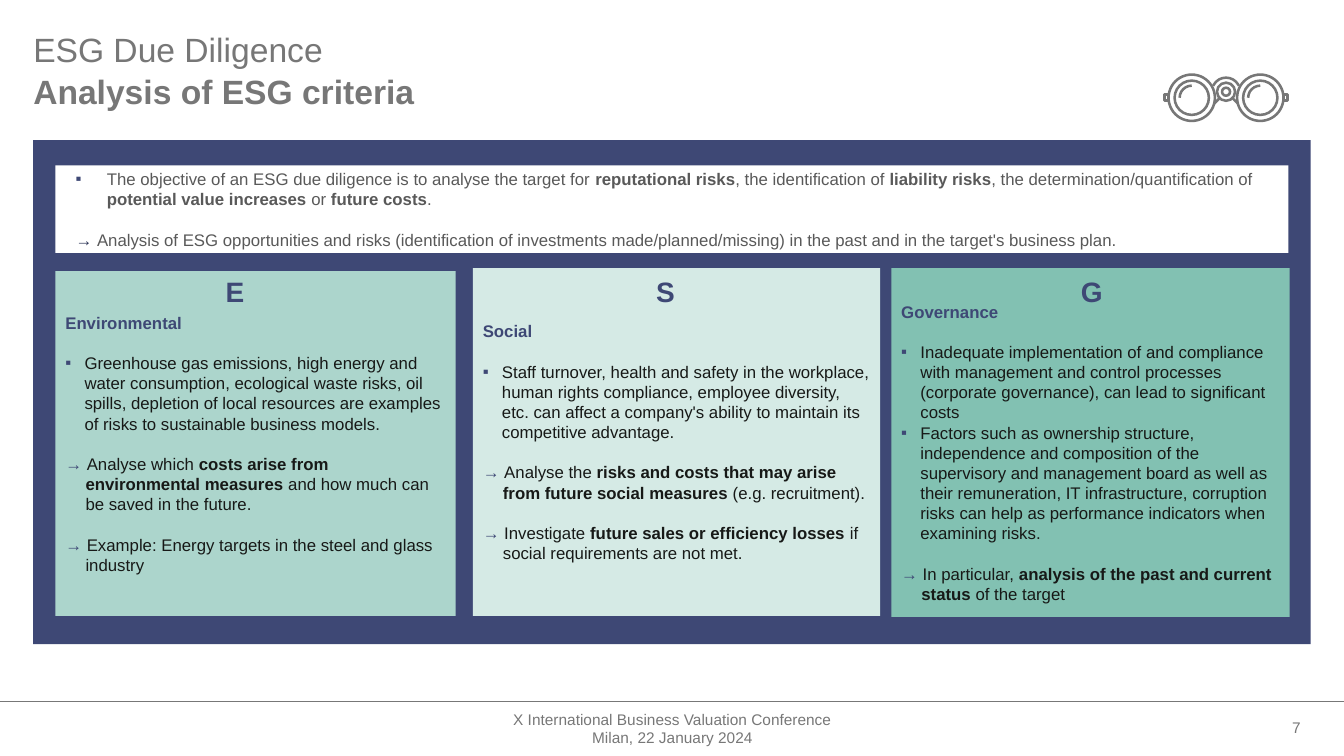
from dataclasses import dataclass

from lxml import etree
from pptx import Presentation
from pptx.dml.color import RGBColor
from pptx.enum import shapes, text
from pptx.oxml import ns
from pptx.util import Inches, Pt


@dataclass(frozen=True)
class Theme:
    font: str = "Arial"
    grey: str = "777777"
    navy: str = "3E4875"
    dark_navy: str = "2E3658"
    body: str = "171917"
    overview: str = "595959"
    white: str = "FFFFFF"
    environmental: str = "ACD5CC"
    social: str = "D5EAE5"
    governance: str = "82C1B2"
    title_size: float = 24
    letter_size: float = 20
    body_size: float = 12
    footer_size: float = 11
    gap: float = 14.4
    icon_line: float = 1.8


THEME = Theme()
BULLET, ARROW = "▪", "→"
LEFT, CENTER, RIGHT = text.PP_ALIGN.LEFT, text.PP_ALIGN.CENTER, text.PP_ALIGN.RIGHT

OVERVIEW = [
    (BULLET, "The objective of an ESG due diligence is to analyse the target for **reputational risks**, "
             "the identification of **liability risks**, the determination/quantification of "
             "**potential value increases **or **future costs**."),
    (ARROW, "Analysis of ESG opportunities and risks (identification of investments made/planned/missing) "
            "in the past and in the target's business plan."),
]
SOCIAL = [
    (BULLET, "Staff turnover, health and safety in the workplace, human rights compliance, employee diversity, "
             "etc. can affect a company's ability to maintain its competitive advantage."),
    (ARROW, "Analyse the **risks and costs that may arise from future social measures **(e.g. recruitment)."),
    (ARROW, "Investigate **future sales or efficiency losses **if social requirements are not met."),
]
GOVERNANCE = [
    (BULLET, "Inadequate implementation of and compliance with management and control processes "
             "(corporate governance), can lead to significant costs"),
    (BULLET, "Factors such as ownership structure, independence and composition of the supervisory and "
             "management board as well as their remuneration, IT infrastructure, corruption risks can help "
             "as performance indicators when examining risks."),
    (ARROW, "In particular, **analysis of the past and current status **of the target"),
]
ENVIRONMENTAL = [
    (BULLET, "Greenhouse gas emissions, high energy and water consumption, ecological waste risks, oil spills, "
             "depletion of local resources are examples of risks to sustainable business models."),
    (ARROW, "Analyse which **costs arise from environmental measures **and how much can be saved in the future."),
    (ARROW, "Example: Energy targets in the steel and glass industry"),
]
CARDS = [
    ("Social", "S", (4.69, 2.66, 4.04, 3.45), 6.2, THEME.social, SOCIAL, 0.05),
    ("Governance", "G", (8.84, 2.66, 3.95, 3.46), 10.43, THEME.governance, GOVERNANCE, 0.25),
    ("Environmental", "E", (0.55, 2.69, 3.97, 3.42), 1.93, THEME.environmental, ENVIRONMENTAL, 0.05),
]


def style(run, size, color, bold=False):
    run.font.name = THEME.font
    run.font.size = Pt(size)
    run.font.bold = bold
    run.font.color.rgb = RGBColor.from_string(color)


def set_frame(frame, insets, anchor=text.MSO_ANCHOR.MIDDLE):
    frame.word_wrap = True
    frame.auto_size = text.MSO_AUTO_SIZE.NONE
    frame.vertical_anchor = anchor
    frame.margin_left, frame.margin_top, frame.margin_right, frame.margin_bottom = map(Inches, insets)


def write_lines(frame, content, size, color, align, bold=False):
    frame.text = content
    for paragraph in frame.paragraphs:
        paragraph.alignment = align
        for run in paragraph.runs:
            style(run, size, color, bold)


def hang(paragraph, indent, bullet):
    properties = paragraph._p.get_or_add_pPr()
    properties.set("marL", str(Inches(indent)))
    properties.set("indent", str(-Inches(indent)))
    if bullet:
        bullet_color = etree.SubElement(properties, ns.qn("a:buClr"))
        etree.SubElement(bullet_color, ns.qn("a:srgbClr"), val=THEME.navy)
        etree.SubElement(properties, ns.qn("a:buFont"), typeface=THEME.font)
        etree.SubElement(properties, ns.qn("a:buChar"), char=BULLET)


def write_points(frame, points, indents, color, arrow_color, heading=None):
    previous = None
    if heading:
        write_lines(frame, heading, THEME.body_size, THEME.navy, LEFT, True)
        previous = "heading"
    for kind, content in points:
        paragraph = frame.add_paragraph() if previous else frame.paragraphs[0]
        paragraph.alignment = LEFT
        hang(paragraph, indents[kind], kind == BULLET)
        if previous and not previous == kind == BULLET:
            paragraph.space_before = Pt(THEME.gap)
        if kind == ARROW:
            arrow = paragraph.add_run()
            arrow.text = ARROW + " "
            style(arrow, THEME.body_size, arrow_color)
        for index, part in enumerate(content.split("**")):
            run = paragraph.add_run()
            run.text = part
            style(run, THEME.body_size, color, index % 2 == 1)
        previous = kind


def add_box(slide, kind, box, fill=None, outline=None):
    shape = slide.shapes.add_shape(kind, *map(Inches, box))
    shape.shadow.inherit = False
    if fill:
        shape.fill.solid()
        shape.fill.fore_color.rgb = RGBColor.from_string(fill)
    else:
        shape.fill.background()
    if outline:
        shape.line.color.rgb = RGBColor.from_string(outline)
        shape.line.width = Pt(THEME.icon_line)
    else:
        shape.line.fill.background()
    return shape


def add_line(slide, start, end, width):
    line = slide.shapes.add_connector(shapes.MSO_CONNECTOR.STRAIGHT, *map(Inches, (*start, *end)))
    line.line.color.rgb = RGBColor.from_string(THEME.grey)
    line.line.width = Pt(width)
    etree.SubElement(line._element.spPr, ns.qn("a:effectLst"))


def add_label(slide, box, content, align):
    label = slide.shapes.add_textbox(*map(Inches, box))
    set_frame(label.text_frame, (0.1, 0.05, 0.1, 0.05))
    write_lines(label.text_frame, content, THEME.footer_size, THEME.grey, align)


def add_round(slide, center, radius, angles=None):
    x, y = center
    kind = shapes.MSO_SHAPE.ARC if angles else shapes.MSO_SHAPE.OVAL
    ring = add_box(slide, kind, (x - radius, y - radius, 2 * radius, 2 * radius), outline=THEME.grey)
    for index, angle in enumerate(angles or ()):
        ring.adjustments[index] = angle * 0.6


def add_binoculars(slide):
    hinge = (12.16, 0.91)
    for radius in (0.09, 0.04):
        add_round(slide, hinge, radius)
    add_round(slide, hinge, 0.14, (205, 335))
    for side, lens_x in ((-1, 11.82), (1, 12.5)):
        for radius in (0.23, 0.17):
            add_round(slide, (lens_x, 0.97), radius)
        add_round(slide, (lens_x, 0.97), 0.12, (180, 270))
        add_box(slide, shapes.MSO_SHAPE.RECTANGLE,
                (lens_x + side * 0.25 - 0.02, 0.94, 0.04, 0.06), outline=THEME.grey)
        add_line(slide, (12.16 + side * 0.06, 0.97), (12.16 + side * 0.12, 1.03), THEME.icon_line)


def add_title(slide):
    title = slide.shapes.title
    title.left, title.top, title.width, title.height = map(Inches, (0.33, 0.33, 6.18, 0.79))
    set_frame(title.text_frame, (0, 0, 0, 0), text.MSO_ANCHOR.TOP)
    write_lines(title.text_frame, "ESG Due Diligence\nAnalysis of ESG criteria",
                THEME.title_size, THEME.grey, LEFT)
    topic, subject = title.text_frame.paragraphs
    topic.line_spacing = subject.line_spacing = 0.9
    topic.space_before = Pt(0)
    subject.space_before = Pt(4.3)
    subject.runs[0].font.bold = True


def main():
    deck = Presentation()
    deck.slide_width, deck.slide_height = Inches(13.33), Inches(7.5)
    slide = deck.slides.add_slide(deck.slide_layouts[5])
    rectangle = shapes.MSO_SHAPE.RECTANGLE

    add_line(slide, (0, 6.96), (13.33, 6.96), 0.5)
    add_label(slide, (12.27, 7.07, 0.73, 0.3), "7", RIGHT)
    add_title(slide)
    add_box(slide, rectangle, (0.33, 1.39, 12.67, 5), THEME.navy)
    for heading, letter, box, letter_left, fill, points, top_inset in CARDS:
        card = add_box(slide, rectangle, box, fill)
        set_frame(card.text_frame, (0.1, top_inset, 0.1, 0.05))
        write_points(card.text_frame, points, {BULLET: 0.19, ARROW: 0.2},
                     THEME.body, THEME.navy, heading)
        initial = add_box(slide, shapes.MSO_SHAPE.OVAL, (letter_left, 2.47, 0.8, 0.84))
        set_frame(initial.text_frame, (0, 0, 0, 0))
        write_lines(initial.text_frame, letter, THEME.letter_size, THEME.navy, CENTER, True)
    add_binoculars(slide)
    overview = add_box(slide, rectangle, (0.55, 1.64, 12.23, 0.87), THEME.white)
    set_frame(overview.text_frame, (0.2, 0, 0.2, 0))
    write_points(overview.text_frame, OVERVIEW, {BULLET: 0.31, ARROW: 0},
                 THEME.overview, THEME.dark_navy)
    add_label(slide, (4.42, 7.07, 4.5, 0.31),
              "X International Business Valuation Conference\nMilan, 22 January 2024", CENTER)
    deck.save("out.pptx")


if __name__ == "__main__":
    main()
